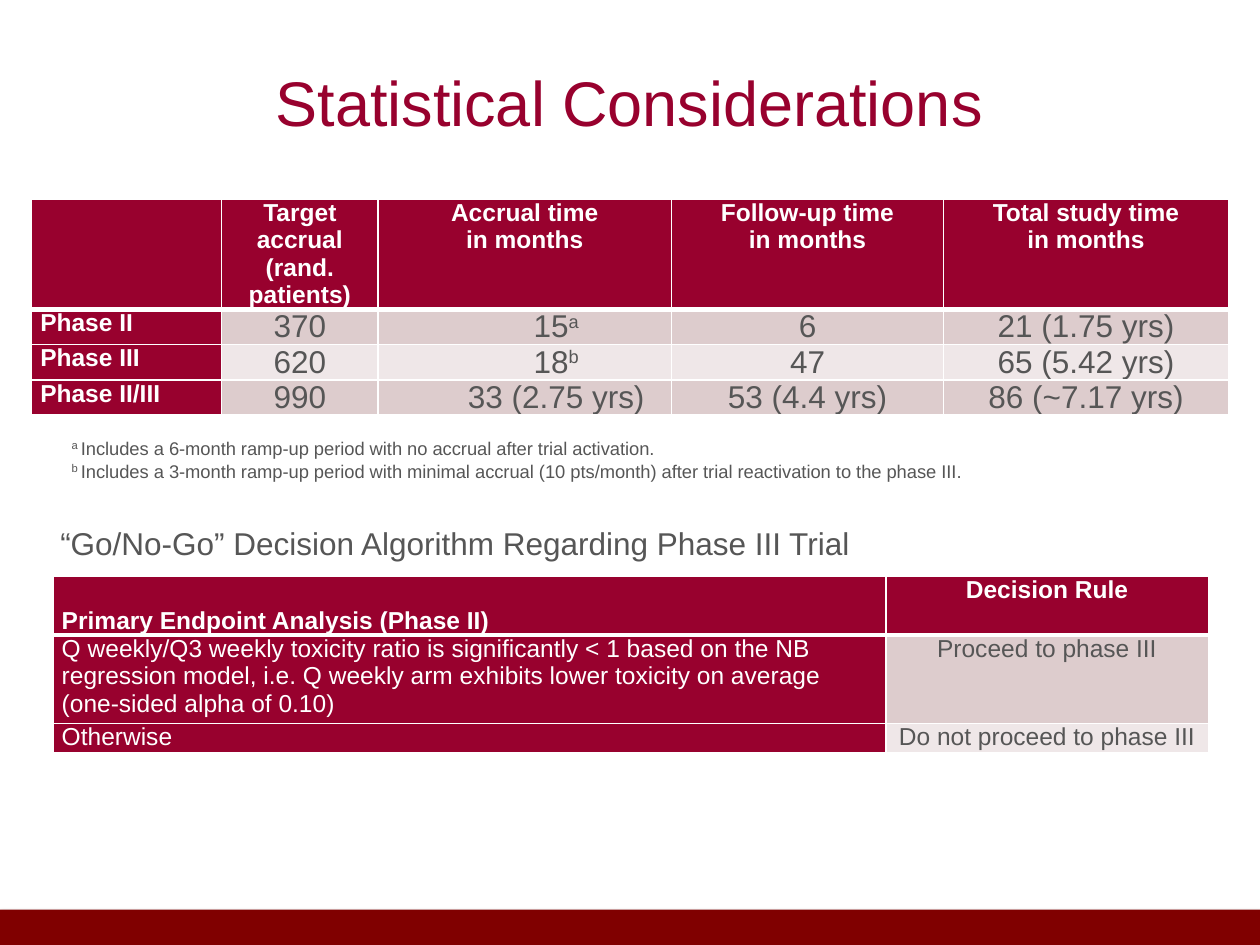
from lxml import etree
from pptx import Presentation
from pptx.dml.color import RGBColor
from pptx.enum import shapes, text
from pptx.oxml import parse_xml
from pptx.oxml.ns import nsdecls, qn
from pptx.util import Inches, Pt

COLORS = {"crimson": "98012E", "maroon": "800000", "white": "FFFFFF",
          "grey": "565656", "rose": "DDCCCD", "blush": "EFE7E8", "black": "000000"}
CENTER, LEFT = text.PP_ALIGN.CENTER, text.PP_ALIGN.LEFT


def rgb(name):
    """Return the named palette colour."""
    return RGBColor.from_string(COLORS[name])


def style(run, size, color, bold=False, raised=False):
    """Format one run, optionally as superscript."""
    run.font.name, run.font.size, run.font.bold = "Arial", Pt(size), bold
    run.font.color.rgb = rgb(color)
    if raised:
        run.font._element.set("baseline", "30000")


def add_border(cell, side, width):
    """Draw a white border on one side of a cell."""
    line = etree.SubElement(cell._tc.get_or_add_tcPr(), qn(f"a:ln{side}"), w=str(Pt(width)))
    fill = etree.SubElement(line, qn("a:solidFill"))
    etree.SubElement(fill, qn("a:srgbClr"), val=COLORS["white"])


def format_cell(cell, row, column, size):
    """Apply borders, fill, margins and text format by position in the table."""
    widths = {"L": 1, "R": 1, "T": 3 if row == 1 else 1, "B": 3 if row == 0 else 1}
    for side, width in widths.items():
        add_border(cell, side, width)
    label = row == 0 or column == 0
    cell.fill.solid()
    cell.fill.fore_color.rgb = rgb("crimson" if label else "rose" if row % 2 else "blush")
    cell.margin_left = cell.margin_right = Inches(0.07)
    cell.margin_top = cell.margin_bottom = 0
    for paragraph in cell.text_frame.paragraphs:
        paragraph.alignment = CENTER if column else LEFT
        for run in paragraph.runs:
            style(run, 14 if label else size, "white" if label else "grey", bold=label)


def add_grid(slide, left, top, widths, heights, rows, size):
    """Build a table with a crimson header row and label column."""
    box = [Inches(v) for v in (left, top, sum(widths), sum(heights))]
    table = slide.shapes.add_table(len(heights), len(widths), *box).table
    for column, width in zip(table.columns, widths):
        column.width = Inches(width)
    for row, height in zip(table.rows, heights):
        row.height = Inches(height)
    for r, values in enumerate(rows):
        for c, value in enumerate(values):
            cell = table.cell(r, c)
            cell.text_frame.text = value
            format_cell(cell, r, c, size)
    return table


def add_title(slide, left, top, width, height):
    """Place and format the slide title."""
    title = slide.shapes.title
    title.left, title.top, title.width, title.height = map(Inches, (left, top, width, height))
    frame = title.text_frame
    frame.text = "Statistical Considerations"
    frame.vertical_anchor = text.MSO_ANCHOR.TOP
    frame.margin_top = Inches(0.1)
    frame.paragraphs[0].alignment = CENTER
    style(frame.paragraphs[0].runs[0], 36, "crimson")


def add_accrual_table(slide, left, top):
    """Show accrual and follow-up times by trial phase."""
    rows = [
        ("", "Target accrual\n(rand. patients)", "Accrual time\nin months",
         "Follow-up time\nin months", "Total study time\nin months"),
        ("Phase II", "370", "15", "6", "21 (1.75 yrs)"),
        ("Phase III", "620", "18", "47", "65 (5.42 yrs)"),
        ("Phase II/III", "990", "33 (2.75 yrs)", "53 (4.4 yrs)", "86 (~7.17 yrs)"),
    ]
    widths = [1.51, 1.24, 2.33, 2.16, 2.26]
    table = add_grid(slide, left, top, widths, [0.87] + [0.28] * 3, rows, 18)
    for row, mark in enumerate(("a", "b", ""), start=1):
        accrual = table.cell(row, 2).text_frame.paragraphs[0]
        accrual._p.get_or_add_pPr().set("marL", str(Inches(0.5)))
        if mark:
            note = accrual.add_run()
            note.text = mark
            style(note, 18, "grey", raised=True)


def add_footnotes(slide, left, top, width, height):
    """Write the two notes marked in the accrual table."""
    notes = {
        "a ": "Includes a 6-month ramp-up period with no accrual after trial activation.",
        "b ": "Includes a 3-month ramp-up period with minimal accrual (10 pts/month) "
              "after trial reactivation to the phase III.",
    }
    frame = slide.shapes.add_textbox(*map(Inches, (left, top, width, height))).text_frame
    frame.word_wrap = False
    frame.vertical_anchor = text.MSO_ANCHOR.MIDDLE
    frame.text = "\n".join(notes)
    for paragraph, note in zip(frame.paragraphs, notes.values()):
        paragraph._p.get_or_add_pPr().set("indent", str(Inches(0.5)))
        style(paragraph.runs[0], 11, "grey", raised=True)
        sentence = paragraph.add_run()
        sentence.text = note
        style(sentence, 10.5, "grey")


def add_decision_heading(slide, left, top, width, height):
    """Write the heading of the decision table."""
    frame = slide.shapes.add_textbox(*map(Inches, (left, top, width, height))).text_frame
    frame.word_wrap = True
    frame.text = "“Go/No-Go” Decision Algorithm Regarding Phase III Trial"
    frame.paragraphs[0].alignment = text.PP_ALIGN.JUSTIFY
    style(frame.paragraphs[0].runs[0], 18, "grey")


def add_decision_table(slide, left, top):
    """Show the rule for proceeding to phase III."""
    rows = [
        ("Primary Endpoint Analysis (Phase II)", "Decision Rule"),
        ("Q weekly/Q3 weekly toxicity ratio is significantly < 1 based on the NB regression "
         "model, i.e. Q weekly arm exhibits lower toxicity on average (one-sided alpha of 0.10)",
         "Proceed to phase III"),
        ("Otherwise", "Do not proceed to phase III"),
    ]
    table = add_grid(slide, left, top, [6.61, 2.56], [0.47, 0.7, 0.23], rows, 14)
    table.cell(0, 0).vertical_anchor = text.MSO_ANCHOR.BOTTOM
    for row in (1, 2):
        table.cell(row, 0).text_frame.paragraphs[0].runs[0].font.bold = False


def add_footer_bar(slide, left, top, width, height):
    """Draw the maroon band with its soft shadow."""
    bar = slide.shapes.add_shape(shapes.MSO_SHAPE.RECTANGLE,
                                 *map(Inches, (left, top, width, height)))
    bar.fill.solid()
    bar.fill.fore_color.rgb = rgb("maroon")
    bar.line.fill.background()
    bar._element.spPr.append(parse_xml(
        f'<a:effectLst {nsdecls("a")}><a:outerShdw blurRad="{Pt(3.1)}" dist="{Pt(1.8)}" '
        f'dir="5400000" rotWithShape="0"><a:srgbClr val="{COLORS["black"]}">'
        '<a:alpha val="35000"/></a:srgbClr></a:outerShdw></a:effectLst>'))


def main():
    """Build and save the slide."""
    deck = Presentation()
    deck.slide_width, deck.slide_height = Inches(10), Inches(7.5)
    slide = deck.slides.add_slide(deck.slide_layouts[5])
    add_footer_bar(slide, 0, 7.22, 10, 0.28)
    add_title(slide, 0.08, 0.4, 9.83, 1.25)
    add_accrual_table(slide, 0.25, 1.58)
    add_footnotes(slide, -0.03, 3.41, 7.93, 0.47)
    add_decision_table(slide, 0.42, 4.57)
    add_decision_heading(slide, 0.38, 4.11, 8.79, 0.4)
    deck.save("out.pptx")


if __name__ == "__main__":
    main()
